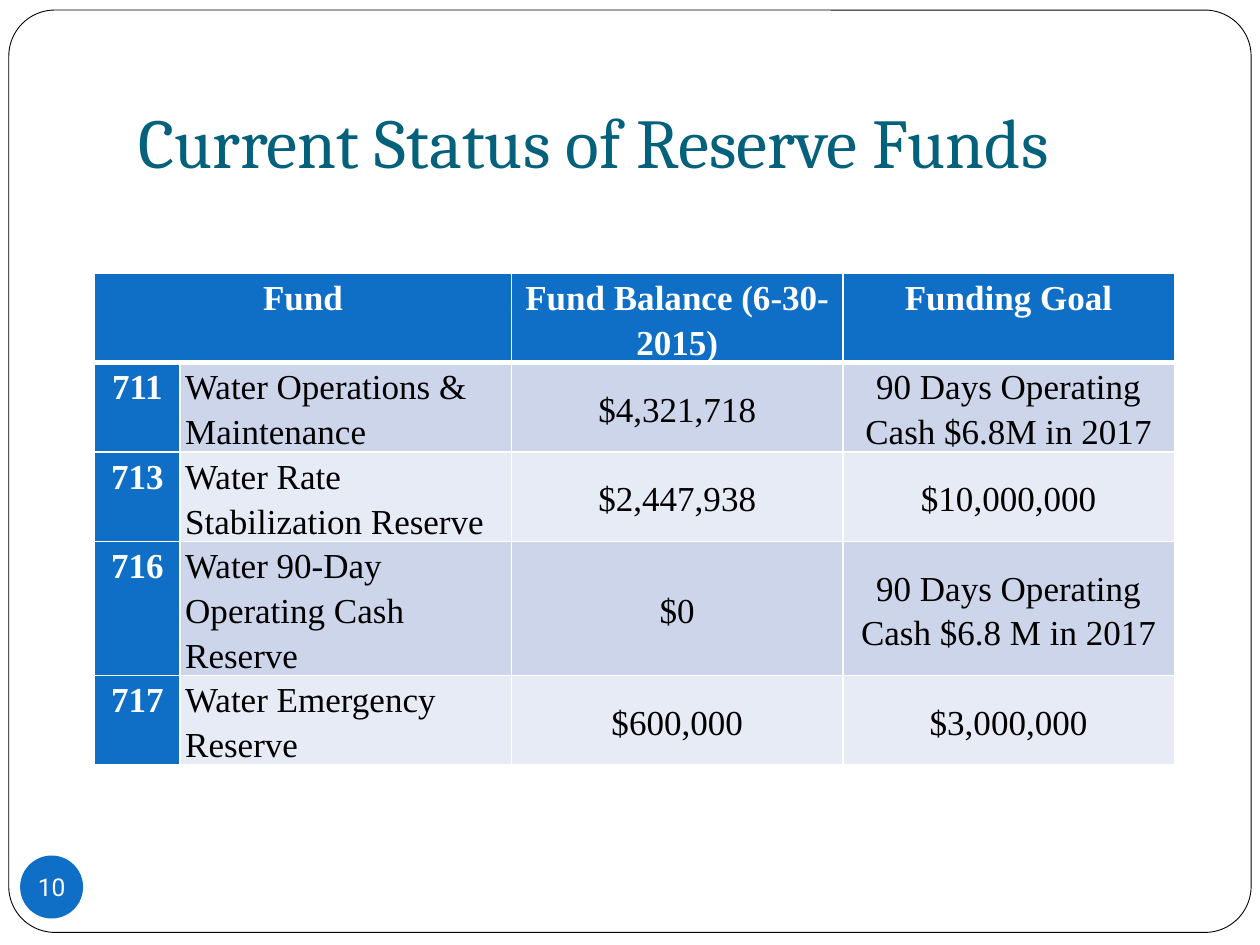
from dataclasses import dataclass

from lxml.etree import SubElement
from pptx import Presentation
from pptx.dml.color import RGBColor
from pptx.enum.shapes import MSO_SHAPE as Shape
from pptx.enum.text import MSO_ANCHOR as Anchor, MSO_AUTO_SIZE as Fit, PP_ALIGN as Align
from pptx.oxml.ns import qn
from pptx.util import Inches, Pt

COLORS = {
    "white": "FFFFFF", "black": "000000", "title": "04617B",
    "blue": "0F6FC6", "dark": "CCD5EA", "light": "E7EBF5",
}


@dataclass
class Fund:
    code: str
    name: str
    balance: str
    goal: str
    height: float = 0.71


HEADS = ["Fund", "", "Fund Balance (6-30-2015)", "Funding Goal"]
FUNDS = [
    Fund("711", "Water Operations & Maintenance", "$4,321,718",
         "90 Days Operating Cash $6.8M in 2017"),
    Fund("713", "Water Rate Stabilization Reserve", "$2,447,938", "$10,000,000"),
    Fund("716", "Water 90-Day Operating Cash Reserve", "$0",
         "90 Days Operating Cash $6.8 M in 2017", 1.06),
    Fund("717", "Water Emergency Reserve", "$600,000", "$3,000,000"),
]
WIDTHS = [0.68, 2.63, 2.63, 2.63]
HEAD_H = 0.7


def rgb(name: str) -> RGBColor:
    return RGBColor.from_string(COLORS[name])


def write(frame, text: str, *, font: str, size: float, color: str, bold=False,
          align=Align.LEFT, spacing=None, before=None) -> None:
    para = frame.paragraphs[0]
    para.alignment = align
    if spacing:
        para.line_spacing = spacing
    if before:
        para.space_before = Pt(before)
    run = para.add_run()
    run.text = text
    run.font.name, run.font.size, run.font.bold = font, Pt(size), bold
    run.font.color.rgb = rgb(color)


def pad(box, left: float, top: float, right: float, bottom: float) -> None:
    box.margin_left, box.margin_top = Inches(left), Inches(top)
    box.margin_right, box.margin_bottom = Inches(right), Inches(bottom)


def add_shape(slide, kind, box: tuple, fill: str, line=None):
    shape = slide.shapes.add_shape(kind, *map(Inches, box))
    shape.shadow.inherit = False
    shape.fill.solid()
    shape.fill.fore_color.rgb = rgb(fill)
    if line:
        shape.line.color.rgb = rgb(line)
        shape.line.width = Pt(0.5)
    else:
        shape.line.fill.background()
    return shape


def set_edges(cell, **widths: float) -> None:
    props = cell._tc.get_or_add_tcPr()
    for side, width in widths.items():
        edge = SubElement(props, qn(f"a:ln{side}"), w=str(Pt(width)))
        fill = SubElement(edge, qn("a:solidFill"))
        SubElement(fill, qn("a:srgbClr"), val=COLORS["white"])


def fill_cell(cell, text: str, row: int, col: int) -> None:
    head = row == 0
    strong = head or col == 0
    pad(cell, 0.04, 0, 0.04, 0)
    cell.vertical_anchor = Anchor.TOP if strong else Anchor.MIDDLE
    set_edges(cell, L=1, R=1, T=3 if row == 1 else 1, B=3 if head else 1)
    cell.fill.solid()
    cell.fill.fore_color.rgb = rgb("blue" if strong else "dark" if row % 2 else "light")
    if text:
        write(cell.text_frame, text, font="Times New Roman", size=20,
              color="white" if strong else "black", bold=strong,
              align=Align.LEFT if col == 1 else Align.CENTER,
              spacing=1.15, before=None if head else 10)


def add_funds(slide) -> None:
    heights = [HEAD_H] + [fund.height for fund in FUNDS]
    box = (0.75, 2.17, sum(WIDTHS), sum(heights))
    table = slide.shapes.add_table(len(heights), len(WIDTHS), *map(Inches, box)).table
    for col, width in zip(table.columns, WIDTHS):
        col.width = Inches(width)
    for row, height in zip(table.rows, heights):
        row.height = Inches(height)
    table.cell(0, 0).merge(table.cell(0, 1))
    rows = [HEADS] + [[f.code, f.name, f.balance, f.goal] for f in FUNDS]
    for r, texts in enumerate(rows):
        for c, text in enumerate(texts):
            fill_cell(table.cell(r, c), text, r, c)


def main() -> None:
    deck = Presentation()
    deck.slide_width, deck.slide_height = Inches(10), Inches(7.5)
    slide = deck.slides.add_slide(deck.slide_layouts[5])

    # Title
    title = slide.shapes.title
    title.left, title.top = Inches(1), Inches(0.3)
    title.width, title.height = Inches(8.5), Inches(1.25)
    frame = title.text_frame
    frame.auto_size, frame.word_wrap = Fit.NONE, True
    frame.vertical_anchor = Anchor.BOTTOM
    pad(frame, 0.1, 0.05, 0.1, 0.1)
    write(frame, "Current Status of Reserve Funds", font="Cambria", size=40, color="title")

    # Rounded border, behind the title
    border = add_shape(slide, Shape.ROUNDED_RECTANGLE, (0.07, 0.08, 9.86, 7.32),
                       "white", "black")
    border.adjustments[0] = 0.05
    title.element.addprevious(border.element)

    # Table of funds
    add_funds(slide)

    # Page number
    badge = add_shape(slide, Shape.OVAL, (0.16, 6.79, 0.5, 0.5), "blue")
    frame = badge.text_frame
    frame.word_wrap = False
    frame.vertical_anchor = Anchor.MIDDLE
    pad(frame, 0, 0, 0, 0)
    write(frame, "10", font="Roboto", size=14, color="white", align=Align.CENTER)

    deck.save("out.pptx")


if __name__ == "__main__":
    main()
